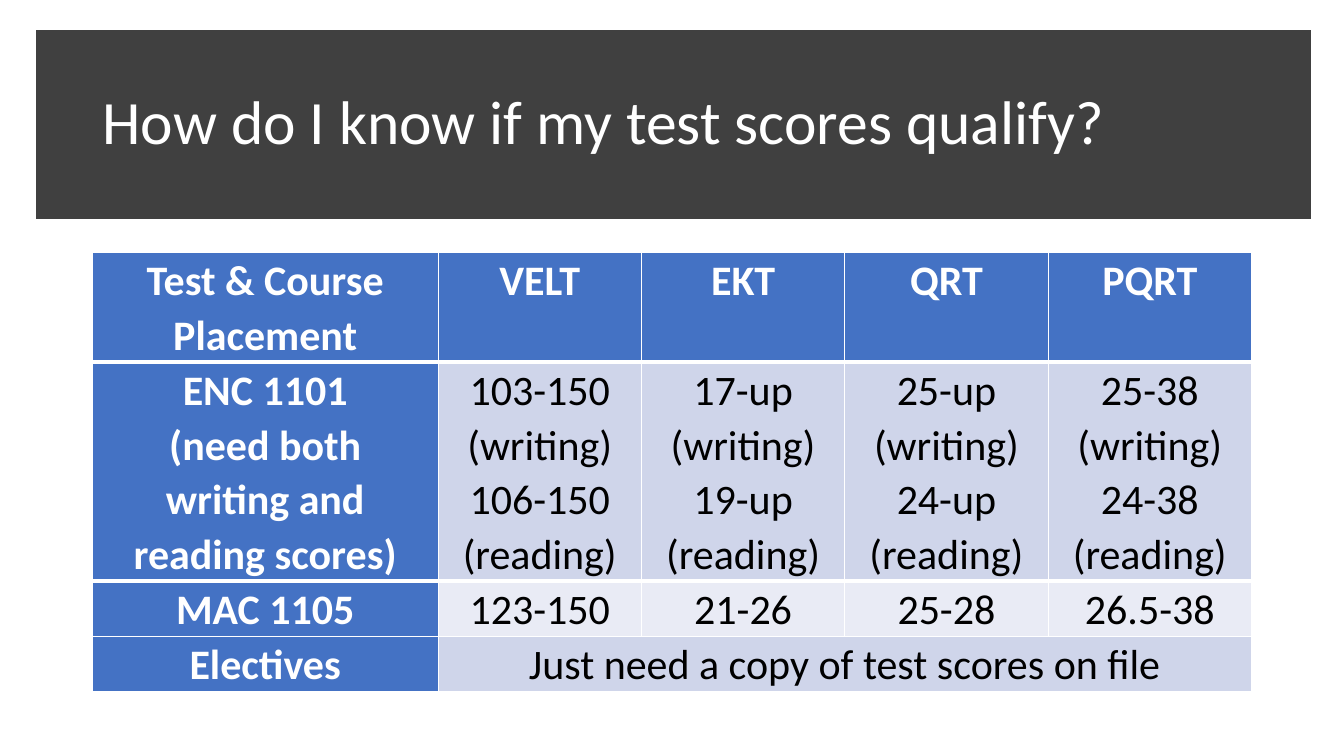
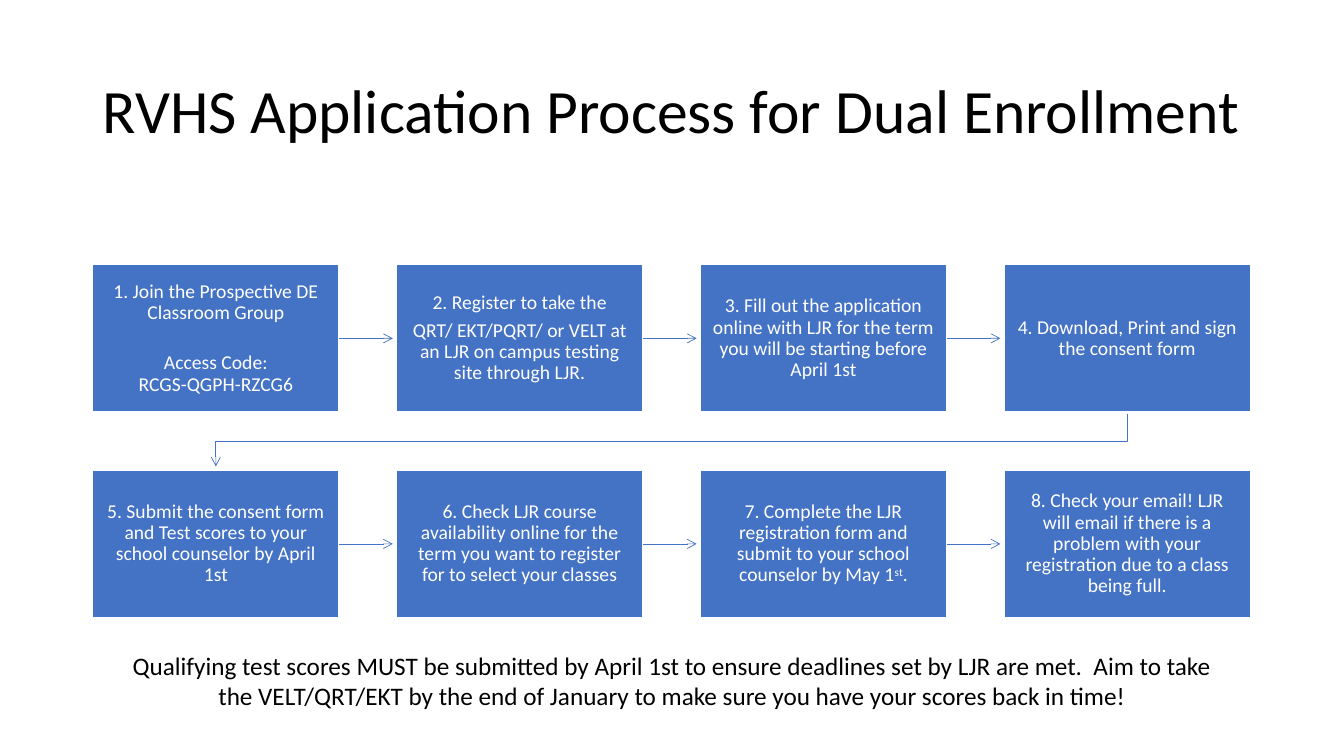
from pptx import Presentation
from pptx.dml.color import RGBColor
from pptx.enum import shapes, text
from pptx.oxml import parse_xml
from pptx.oxml import ns
from pptx.util import Pt

# Shared look
FONT = "Calibri"
BLUE = RGBColor(0x44, 0x72, 0xC4)
DARK = RGBColor(0x40, 0x40, 0x40)
PALE = RGBColor(0xCF, 0xD5, 0xEA)
LIGHT = RGBColor(0xE9, 0xEB, 0xF5)
WHITE = RGBColor(0xFF, 0xFF, 0xFF)
BLACK = RGBColor(0, 0, 0)
LEFT, WIDTH = 66, 828

# Table content: a line break is \v, a new paragraph is \n
SCORES = [
    ["Test & Course Placement", "VELT", "EKT", "QRT", "PQRT"],
    ["ENC 1101\n(need both writing and reading scores)",
     "103-150 (writing)\v106-150 (reading)",
     "17-up (writing)\v19-up (reading)",
     "25-up (writing)\v24-up (reading)",
     "25-38\n(writing)\n24-38\n(reading)"],
    ["MAC 1105", "123-150", "21-26", "25-28", "26.5-38"],
    ["Electives", "Just need a copy of test scores on file"],
]
COLS = [247] + [145.25] * 4
ROWS = [78, 154, 39.4, 39.4]

# Process steps: text between ^ marks is raised
STEPS = [
    "1. Join the Prospective DE Classroom Group\nAccess Code:\vRCGS-QGPH-RZCG6",
    "2. Register to take the\nQRT/ EKT/PQRT/ or VELT at an LJR on campus testing "
    "site through LJR.",
    "3. Fill out the application online with LJR for the term you will be "
    "starting before April 1st",
    "4. Download, Print and sign the consent form",
    "5. Submit the consent form and Test scores to your school counselor by "
    "April 1st",
    "6. Check LJR course availability online for the term you want to register "
    "for to select your classes",
    "7. Complete the LJR registration form and submit to your school counselor "
    "by May 1^st^.",
    "8. Check your email! LJR will email if there is a problem with your "
    "registration due to a class being full.",
]
NOTE = ("Qualifying test scores MUST be submitted by April 1st to ensure "
        "deadlines set by LJR are met.  Aim to take the VELT/QRT/EKT by the end "
        "of January to make sure you have your scores back in time!")

# Step grid
PER_ROW = 4
BOX_W, BOX_H = 176.4, 105.8
STEP_X, STEP_Y = 217, 146.8
GRID_TOP = 188.8
GAP = 2.4  # from arrow tip to the next box


def style(frame, size, color, bold=False, align=text.PP_ALIGN.CENTER,
          space=1.0, after=0):
    for para in frame.paragraphs:
        para.alignment = align
        para.line_spacing = space
        para.space_after = Pt(after)
        for run in para.runs:
            font = run.font
            font.name, font.size, font.bold = FONT, Pt(size), bold
            font.color.rgb = color


def inset(item, side, top):
    item.margin_left = item.margin_right = Pt(side)
    item.margin_top = item.margin_bottom = Pt(top)


def add_slide(deck, title, top, color):
    slide = deck.slides.add_slide(deck.slide_layouts[5])
    head = slide.shapes.title
    head.left, head.top = Pt(LEFT), Pt(top)
    head.width, head.height = Pt(WIDTH), Pt(104.4)
    frame = head.text_frame
    frame.text = title
    frame.vertical_anchor = text.MSO_ANCHOR.MIDDLE
    style(frame, 44, color, align=text.PP_ALIGN.LEFT, space=0.9)
    return slide


def add_rect(slide, left, top, width, height, fill, line, weight):
    rect = slide.shapes.add_shape(shapes.MSO_SHAPE.RECTANGLE, Pt(left), Pt(top),
                                  Pt(width), Pt(height))
    rect.shadow.inherit = False
    rect.fill.solid()
    rect.fill.fore_color.rgb = fill
    rect.line.color.rgb = line
    rect.line.width = Pt(weight)
    corner = parse_xml(f'<a:miter {ns.nsdecls("a")} lim="800000"/>')
    rect.line._get_or_add_ln().append(corner)
    return rect


def add_band(slide):
    band = add_rect(slide, 31, 26.6, 900.7, 124.6, DARK, DARK, 10)
    slide.shapes._spTree.insert(2, band._element)  # behind the title


def set_edge(cell, side):
    """Draw the thick white rule below the header row."""
    edge = parse_xml(f'<a:{side} {ns.nsdecls("a")} w="{Pt(3)}"><a:solidFill>'
                     f'<a:srgbClr val="{WHITE}"/></a:solidFill></a:{side}>')
    cell._tc.get_or_add_tcPr().insert(0, edge)


def add_scores(slide):
    table = slide.shapes.add_table(len(ROWS), len(COLS), Pt(LEFT), Pt(180),
                                   Pt(WIDTH), Pt(sum(ROWS))).table
    table.first_col = True
    for col, width in zip(table.columns, COLS):
        col.width = Pt(width)
    for row, height in zip(table.rows, ROWS):
        row.height = Pt(height)
    table.cell(3, 1).merge(table.cell(3, 4))
    for r, words in enumerate(SCORES):
        for c, word in enumerate(words):
            cell = table.cell(r, c)
            head = r == 0 or c == 0
            cell.fill.solid()
            cell.fill.fore_color.rgb = BLUE if head else PALE if r % 2 else LIGHT
            inset(cell, 14.4, 0)
            cell.text_frame.text = word
            style(cell.text_frame, 30, WHITE if head else BLACK, head, space=1.07)
    for c in range(len(COLS)):
        set_edge(table.cell(0, c), "lnB")
        set_edge(table.cell(1, c), "lnT")


def add_step(slide, index, words):
    row, col = divmod(index, PER_ROW)
    box = add_rect(slide, LEFT + col * STEP_X, GRID_TOP + row * STEP_Y,
                   BOX_W, BOX_H, BLUE, WHITE, 1.5)
    frame = box.text_frame
    frame.word_wrap = True
    frame.vertical_anchor = text.MSO_ANCHOR.MIDDLE
    inset(frame, 8.6, 9.4)
    first, *rest = words.split("^")
    frame.text = first
    for i, part in enumerate(rest):
        run = frame.paragraphs[-1].add_run()
        run.text = part
        if i % 2 == 0:
            run._r.get_or_add_rPr().set("baseline", "30000")
    style(frame, 14, WHITE, space=0.9, after=4.9)
    return box


def set_arrow(line):
    line.line.color.rgb = BLUE
    line.line.width = Pt(0.5)
    tip = parse_xml(f'<a:tailEnd {ns.nsdecls("a")} type="arrow"/>')
    line.line._get_or_add_ln().append(tip)


def add_arrow(slide, start, end):
    y = start.top + start.height // 2
    line = slide.shapes.add_connector(shapes.MSO_CONNECTOR.STRAIGHT,
                                      start.left + start.width, y,
                                      end.left - Pt(GAP), y)
    line.begin_connect(start, 3)
    set_arrow(line)
    line._element.spPr.append(parse_xml(f'<a:effectLst {ns.nsdecls("a")}/>'))


def add_turn(slide, start, end):
    """Lead from the end of one row to the start of the next."""
    x1, x2 = (box.left + box.width // 2 for box in (start, end))
    low = start.top + start.height
    mid = (low + end.top) // 2
    path = slide.shapes.build_freeform(x1, low + Pt(1))
    path.add_line_segments([(x1, mid), (x2, mid), (x2, end.top - Pt(GAP))],
                           close=False)
    turn = path.convert_to_shape()
    turn.shadow.inherit = False
    turn.fill.background()
    set_arrow(turn)


def add_note(slide):
    frame = slide.shapes.add_textbox(Pt(74), Pt(461), Pt(812), Pt(51)).text_frame
    frame.word_wrap = True
    frame.text = NOTE
    style(frame, 18, BLACK)


def main():
    deck = Presentation()
    deck.slide_width, deck.slide_height = Pt(960), Pt(540)

    # Test scores
    slide = add_slide(deck, "How do I know if my test scores qualify?", 36.8, WHITE)
    add_band(slide)
    add_scores(slide)

    # Application process
    slide = add_slide(deck, "RVHS Application Process for Dual Enrollment", 28.8,
                      BLACK)
    boxes = [add_step(slide, i, words) for i, words in enumerate(STEPS)]
    boxes[0].text_frame.paragraphs[1].space_before = Pt(16)
    for i, (start, end) in enumerate(zip(boxes, boxes[1:]), 1):
        link = add_arrow if i % PER_ROW else add_turn
        link(slide, start, end)
    add_note(slide)

    deck.save("out.pptx")


if __name__ == "__main__":
    main()
